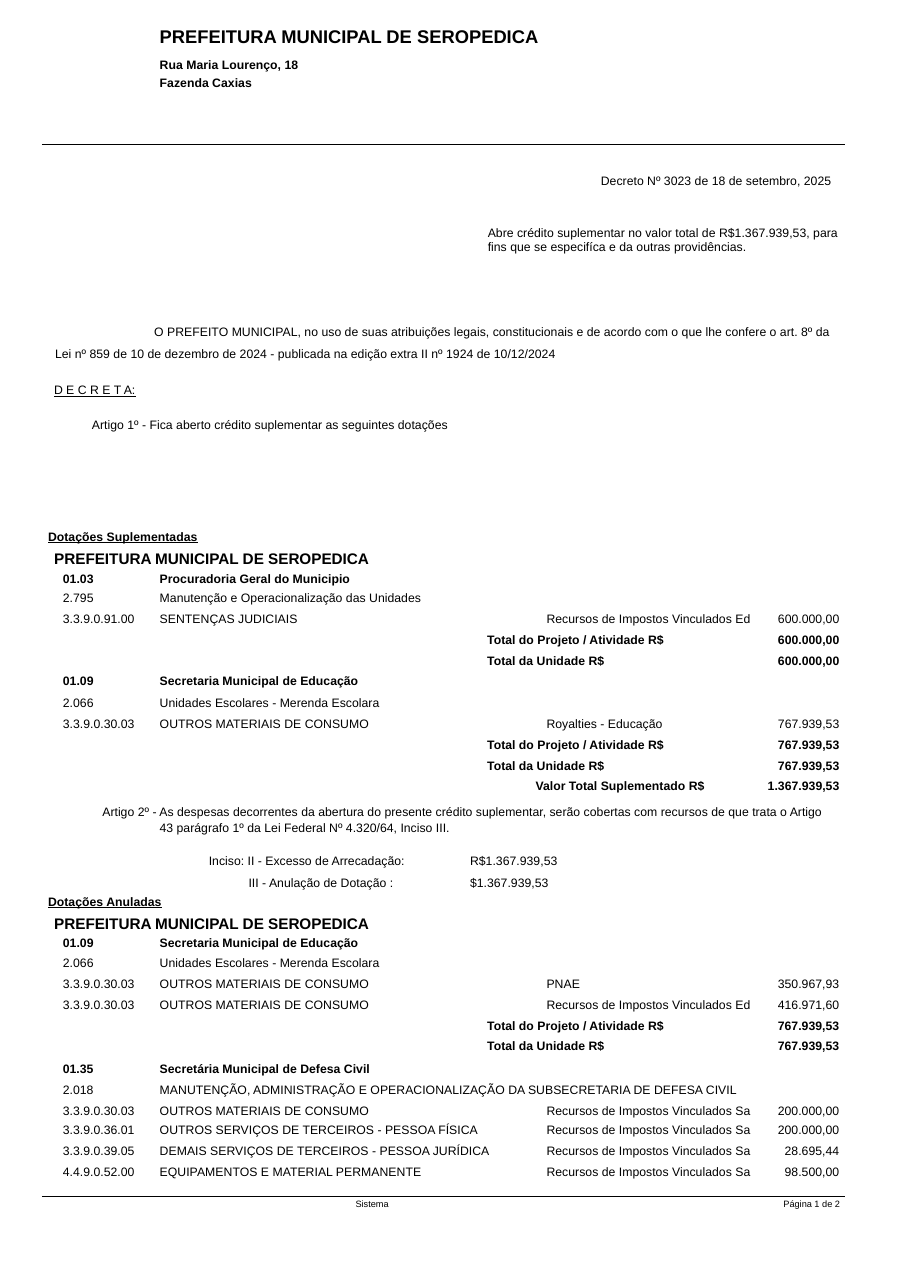
from pptx import Presentation
from pptx.dml.color import RGBColor
from pptx.enum.shapes import MSO_CONNECTOR
from pptx.enum.text import MSO_ANCHOR, MSO_AUTO_SIZE, PP_ALIGN
from pptx.oxml.ns import qn
from pptx.util import Pt
from lxml import etree

TABLE_LEFT = 38.9
CODE_X, DESC_X, AMOUNT_MARGIN = 41.1, 104.4, 3.6
SOURCE_X, TOTAL_X, GRAND_TOTAL_X = 357.2, 318.4, 350
ENTITY = "PREFEITURA MUNICIPAL DE SEROPEDICA"
TAXES = "Recursos de Impostos Vinculados "
PROJECT_TOTAL, UNIT_TOTAL = "Total do Projeto / Atividade R$", "Total da Unidade R$"


def color(value):
    return RGBColor.from_string(value)


def set_format(target, values):
    for name, value in values.items():
        setattr(target, name, value)


class DecreePage:
    font, ink, size = "Arial", "000000", 8

    def __init__(self, prs):
        self.slide = prs.slides.add_slide(prs.slide_layouts[1])

    def add_text(self, p, text, size=None, bold=False, underline=False,
                 left=0, indent=0, before=0, spacing=1.0, align=PP_ALIGN.LEFT):
        pPr = p._p.get_or_add_pPr()
        pPr.set("marL", str(Pt(left)))
        pPr.set("indent", str(Pt(indent)))
        etree.SubElement(pPr, qn("a:buNone"))
        set_format(p, dict(alignment=align, line_spacing=spacing,
                           space_before=Pt(before), space_after=Pt(0)))
        r = p.add_run()
        r.text = text
        set_format(r.font, dict(name=self.font, size=Pt(size or self.size),
                                bold=bold, underline=underline))
        r.font.color.rgb = color(self.ink)

    def fill_box(self, sp, x, y, w, h, paragraphs):
        set_format(sp, dict(left=Pt(x), top=Pt(y), width=Pt(w), height=Pt(h)))
        tf = sp.text_frame
        set_format(tf, dict(word_wrap=True, auto_size=MSO_AUTO_SIZE.NONE,
                            vertical_anchor=MSO_ANCHOR.TOP, margin_left=0,
                            margin_right=0, margin_top=0, margin_bottom=0))
        for i, (text, style) in enumerate(paragraphs):
            p = tf.add_paragraph() if i else tf.paragraphs[0]
            self.add_text(p, text, **style)

    def title(self, *box):
        self.fill_box(self.slide.shapes.title, *box)

    def body(self, *box):
        self.fill_box(self.slide.placeholders[1], *box)

    def text(self, *box):
        self.fill_box(self.slide.shapes.add_textbox(0, 0, 0, 0), *box)

    def rule(self, y):
        line = self.slide.shapes.add_connector(
            MSO_CONNECTOR.STRAIGHT, Pt(27.4), Pt(y), Pt(552.2), Pt(y))
        line.line.width = Pt(0.75)
        line.line.color.rgb = color(self.ink)
        etree.SubElement(line._element.spPr, qn("a:effectLst"))

    def heading(self, y, text):
        self.text(31.4, y, 214, 26, [
            (text, dict(bold=True, underline=True)),
            (ENTITY, dict(size=10, bold=True, left=4, before=3.6))])

    def table(self, y, widths, heights, rows, merge_corner=True):
        frame = self.slide.shapes.add_table(
            len(rows), 4, Pt(TABLE_LEFT), Pt(y), Pt(sum(widths)), Pt(sum(heights)))
        table = frame.table
        set_format(table, dict(first_row=False, horz_banding=False))
        for col, width in zip(table.columns, widths):
            col.width = Pt(width)
        for i, (height, values) in enumerate(zip(heights, rows)):
            table.rows[i].height = Pt(height)
            label = values[2]
            is_total = label.startswith(("Total", "Valor"))
            label_x = (TOTAL_X if label.startswith("Total")
                       else GRAND_TOTAL_X if is_total else SOURCE_X)
            text_x = (CODE_X, DESC_X, label_x)
            for j, value in enumerate(values):
                cell = table.cell(i, j)
                cell.fill.background()
                # In the tall row, the next unit starts below the total
                top = 14.3 if height > 20 and j < 2 else 1.5 if height > 12 else 0
                if i and height < 12:
                    top = 1
                set_format(cell, dict(margin_left=0, margin_bottom=0, margin_top=Pt(top),
                                      margin_right=Pt(AMOUNT_MARGIN if j == 3 else 0)))
                p = cell.text_frame.paragraphs[0]
                if not value:
                    p._p.get_or_add_endParaRPr().set("sz", str(self.size * 100))
                    continue
                bold = is_total if j > 1 else values[0].startswith("0")
                if j == 3:
                    self.add_text(p, value, bold=bold, align=PP_ALIGN.RIGHT)
                else:
                    left = text_x[j] - TABLE_LEFT - sum(widths[:j])
                    self.add_text(p, value, bold=bold, left=left)
        if merge_corner:
            table.cell(0, 2).merge(table.cell(1, 3))


def main():
    prs = Presentation()
    set_format(prs, dict(slide_width=Pt(594.72), slide_height=Pt(841.68)))
    page = DecreePage(prs)

    # Letterhead
    page.rule(94.3)
    page.title(DESC_X, 16.2, 300, 16, [(ENTITY, dict(size=12, bold=True))])
    address = dict(bold=True, spacing=1.25)
    page.text(DESC_X, 35.1, 250, 24, [
        ("Rua Maria Lourenço, 18", address), ("Fazenda Caxias", address)])

    # Decree number, summary and preamble
    page.text(392.7, 113.2, 160, 11, [("Decreto Nº 3023 de 18 de setembro, 2025", {})])
    page.text(318.8, 147.8, 232, 20, [
        ("Abre crédito suplementar no valor total de R$1.367.939,53, para "
         "fins que se especifíca e da outras providências.", dict(spacing=Pt(9.2)))])
    page.body(35.3, 207.2, 514, 76, [
        ("O PREFEITO MUNICIPAL, no uso de suas atribuições legais, constitucionais e de "
         "acordo com o que lhe confere o art. 8º da Lei nº 859 de 10 de dezembro de 2024 - "
         "publicada na edição extra II nº 1924 de 10/12/2024",
         dict(left=0.7, indent=64.8, spacing=1.5)),
        ("D E C R E T A:", dict(underline=True, before=14)),
        ("Artigo 1º - Fica aberto crédito suplementar as seguintes dotações",
         dict(left=24.8, before=13))])

    # Supplemented appropriations
    page.heading(345.8, "Dotações Suplementadas")
    page.table(
        373.7, [57.6, 200.9, 200.2, 54.7],
        [11.5, 13.7, 13.7, 13.7, 27.4, 13.7, 13.7, 13.7, 13.7, 10.8],
        [("01.03", "Procuradoria Geral do Municipio", "", ""),
         ("2.795", "Manutenção e Operacionalização das Unidades", "", ""),
         ("3.3.9.0.91.00", "SENTENÇAS JUDICIAIS", TAXES + "Ed", "600.000,00"),
         ("", "", PROJECT_TOTAL, "600.000,00"),
         ("01.09", "Secretaria Municipal de Educação", UNIT_TOTAL, "600.000,00"),
         ("2.066", "Unidades Escolares - Merenda Escolara", "", ""),
         ("3.3.9.0.30.03", "OUTROS MATERIAIS DE CONSUMO", "Royalties - Educação", "767.939,53"),
         ("", "", PROJECT_TOTAL, "767.939,53"),
         ("", "", UNIT_TOTAL, "767.939,53"),
         ("", "", "Valor Total Suplementado R$", "1.367.939,53")])

    # Article 2 and its funding sources
    page.text(66.9, 524.6, 475, 23, [
        ("Artigo 2º - As despesas decorrentes da abertura do presente crédito suplementar, "
         "serão cobertas com recursos de que trata o Artigo 43 parágrafo 1º da Lei Federal "
         "Nº 4.320/64, Inciso III.", dict(left=37.4, indent=-37.4, spacing=1.1))])
    page.text(136.5, 557.4, 140, 26, [
        ("Inciso: II - Excesso de Arrecadação:", {}),
        ("III - Anulação de Dotação :", dict(left=26, before=5.2))])
    page.text(307.2, 557.4, 70, 26, [
        ("R$1.367.939,53", {}), ("$1.367.939,53", dict(before=5.2))])

    # Cancelled appropriations
    page.heading(584.2, "Dotações Anuladas")
    page.table(
        612, [57.6, 187.2, 216.7, 51.8], [11.5, 13.7, 13.7, 13.7, 13.7, 11.5],
        [("01.09", "Secretaria Municipal de Educação", "", ""),
         ("2.066", "Unidades Escolares - Merenda Escolara", "", ""),
         ("3.3.9.0.30.03", "OUTROS MATERIAIS DE CONSUMO", "PNAE", "350.967,93"),
         ("3.3.9.0.30.03", "OUTROS MATERIAIS DE CONSUMO", TAXES + "Ed", "416.971,60"),
         ("", "", PROJECT_TOTAL, "767.939,53"),
         ("", "", UNIT_TOTAL, "767.939,53")])

    # Civil defence unit
    second = dict(before=4.6)
    page.text(CODE_X, 693.3, 30, 25, [("01.35", dict(bold=True)), ("2.018", second)])
    page.text(DESC_X, 693.3, 400, 25, [
        ("Secretária Municipal de Defesa Civil", dict(bold=True)),
        ("MANUTENÇÃO, ADMINISTRAÇÃO E OPERACIONALIZAÇÃO DA SUBSECRETARIA DE DEFESA CIVIL",
         second)])
    page.table(
        721.4, [57.6, 242.6, 161.3, 51.8], [11.5, 13.7, 13.7, 11.5],
        [("3.3.9.0.30.03", "OUTROS MATERIAIS DE CONSUMO", TAXES + "Sa", "200.000,00"),
         ("3.3.9.0.36.01", "OUTROS SERVIÇOS DE TERCEIROS - PESSOA FÍSICA",
          TAXES + "Sa", "200.000,00"),
         ("3.3.9.0.39.05", "DEMAIS SERVIÇOS DE TERCEIROS - PESSOA JURÍDICA",
          TAXES + "Sa", "28.695,44"),
         ("4.4.9.0.52.00", "EQUIPAMENTOS E MATERIAL PERMANENTE",
          TAXES + "Sa", "98.500,00")], merge_corner=False)

    # Footer
    page.rule(781.9)
    for x, label in ((232.4, "Sistema"), (512, "Página 1 de 2")):
        page.text(x, 783.3, 42, 8, [(label, dict(size=6))])

    prs.save("out.pptx")


if __name__ == "__main__":
    main()
